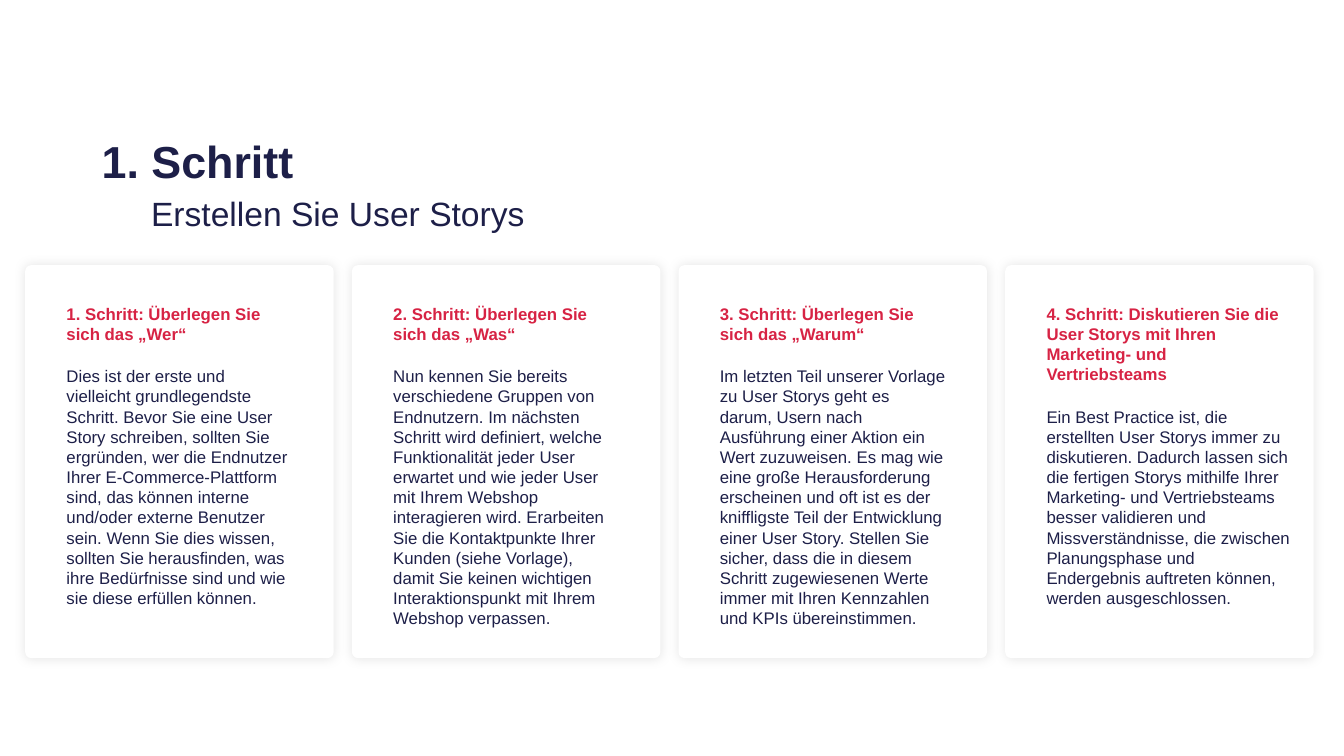
from dataclasses import dataclass

from lxml.etree import SubElement
from pptx import Presentation
from pptx.dml.color import RGBColor
from pptx.enum.shapes import MSO_SHAPE as Shape
from pptx.enum.text import MSO_ANCHOR as Anchor
from pptx.oxml.ns import qn
from pptx.slide import Slide
from pptx.text.text import TextFrame
from pptx.util import Inches, Pt

COLORS = {"navy": "1D1F48", "red": "D72344", "white": "FFFFFF", "black": "000000"}
CARD_LEFT, CARD_TOP, CARD_WIDTH, CARD_HEIGHT = 0.25, 2.63, 3.06, 3.9
CARD_PITCH = 3.24
TEXT_TOP, TEXT_HEIGHT = 2.96, 3.47
TEXT_INSET = 0.41


@dataclass(frozen=True)
class Card:
    heading: str
    body: str
    text_width: float = CARD_WIDTH


CARDS = [
    Card(
        "1. Schritt: Überlegen Sie sich das „Wer“",
        "Dies ist der erste und vielleicht grundlegendste Schritt. Bevor Sie eine User "
        "Story schreiben, sollten Sie ergründen, wer die Endnutzer Ihrer "
        "E-Commerce-Plattform sind, das können interne und/oder externe Benutzer sein. "
        "Wenn Sie dies wissen, sollten Sie herausfinden, was ihre Bedürfnisse sind und "
        "wie sie diese erfüllen können.",
    ),
    Card(
        "2. Schritt: Überlegen Sie sich das „Was“",
        "Nun kennen Sie bereits verschiedene Gruppen von Endnutzern. Im nächsten Schritt "
        "wird definiert, welche Funktionalität jeder User erwartet und wie jeder User "
        "mit Ihrem Webshop interagieren wird. Erarbeiten Sie die Kontaktpunkte Ihrer "
        "Kunden (siehe Vorlage), damit Sie keinen wichtigen Interaktionspunkt mit Ihrem "
        "Webshop verpassen.",
    ),
    Card(
        "3. Schritt: Überlegen Sie sich das „Warum“",
        "Im letzten Teil unserer Vorlage zu User Storys geht es darum, Usern nach "
        "Ausführung einer Aktion ein Wert zuzuweisen. Es mag wie eine große "
        "Herausforderung erscheinen und oft ist es der kniffligste Teil der Entwicklung "
        "einer User Story. Stellen Sie sicher, dass die in diesem Schritt zugewiesenen "
        "Werte immer mit Ihren Kennzahlen und KPIs übereinstimmen.",
    ),
    Card(
        "4. Schritt: Diskutieren Sie die User Storys mit Ihren Marketing- und "
        "Vertriebsteams",
        "Ein Best Practice ist, die erstellten User Storys immer zu diskutieren. Dadurch "
        "lassen sich die fertigen Storys mithilfe Ihrer Marketing- und Vertriebsteams "
        "besser validieren und Missverständnisse, die zwischen Planungsphase und "
        "Endergebnis auftreten können, werden ausgeschlossen.",
        text_width=3.24,
    ),
]


def add_box(page: Slide, left: float, top: float, width: float, height: float,
            inset: float = 0.1, anchor: Anchor = Anchor.TOP) -> TextFrame:
    box = page.shapes.add_textbox(Inches(left), Inches(top), Inches(width), Inches(height))
    frame = box.text_frame
    frame.word_wrap = True
    frame.vertical_anchor = anchor
    frame.margin_left = frame.margin_right = Inches(inset)
    frame.margin_top = frame.margin_bottom = Inches(0.05)
    return frame


def write(frame: TextFrame, text: str, *, size: float, color: str = "navy",
          bold: bool = False, before: float = 0, spacing: float = 1.0) -> None:
    para = frame.paragraphs[0]
    if para.runs:
        para = frame.add_paragraph()
    para.space_before = Pt(before)
    para.line_spacing = spacing
    span = para.add_run()
    span.text = text
    span.font.name = "Arial"
    span.font.size = Pt(size)
    span.font.bold = bold
    span.font.color.rgb = RGBColor.from_string(COLORS[color])


def draw_panel(page: Slide, left: float) -> None:
    panel = page.shapes.add_shape(
        Shape.ROUNDED_RECTANGLE,
        Inches(left), Inches(CARD_TOP), Inches(CARD_WIDTH), Inches(CARD_HEIGHT))
    panel.adjustments[0] = 0.02
    panel.fill.solid()
    panel.fill.fore_color.rgb = RGBColor.from_string(COLORS["white"])
    panel.line.fill.background()
    panel.shadow.inherit = False
    effects = panel.element.spPr.find(qn("a:effectLst"))
    glow = SubElement(effects, qn("a:outerShdw"), blurRad=str(Pt(8)), dist="0",
                      dir="5400000", algn="ctr", rotWithShape="0")
    tint = SubElement(glow, qn("a:srgbClr"), val=COLORS["black"])
    SubElement(tint, qn("a:alpha"), val="10000")


def draw_card(page: Slide, card: Card, left: float) -> None:
    draw_panel(page, left)
    frame = add_box(page, left, TEXT_TOP, card.text_width, TEXT_HEIGHT, TEXT_INSET)
    write(frame, card.heading, size=12, color="red", bold=True)
    write(frame, card.body, size=12, before=16)


def main() -> None:
    deck = Presentation()
    deck.slide_width, deck.slide_height = Inches(13.33), Inches(7.5)
    page = deck.slides.add_slide(deck.slide_layouts[6])
    title = add_box(page, 0.91, 1.35, 5.55, 0.56, anchor=Anchor.MIDDLE)
    write(title, "1. Schritt", size=32, bold=True, spacing=0.9)
    subtitle = add_box(page, 1.4, 1.83, 5.46, 0.56, anchor=Anchor.MIDDLE)
    write(subtitle, "Erstellen Sie User Storys", size=24)
    for index, card in enumerate(CARDS):
        draw_card(page, card, CARD_LEFT + index * CARD_PITCH)
    deck.save("out.pptx")


if __name__ == "__main__":
    main()
